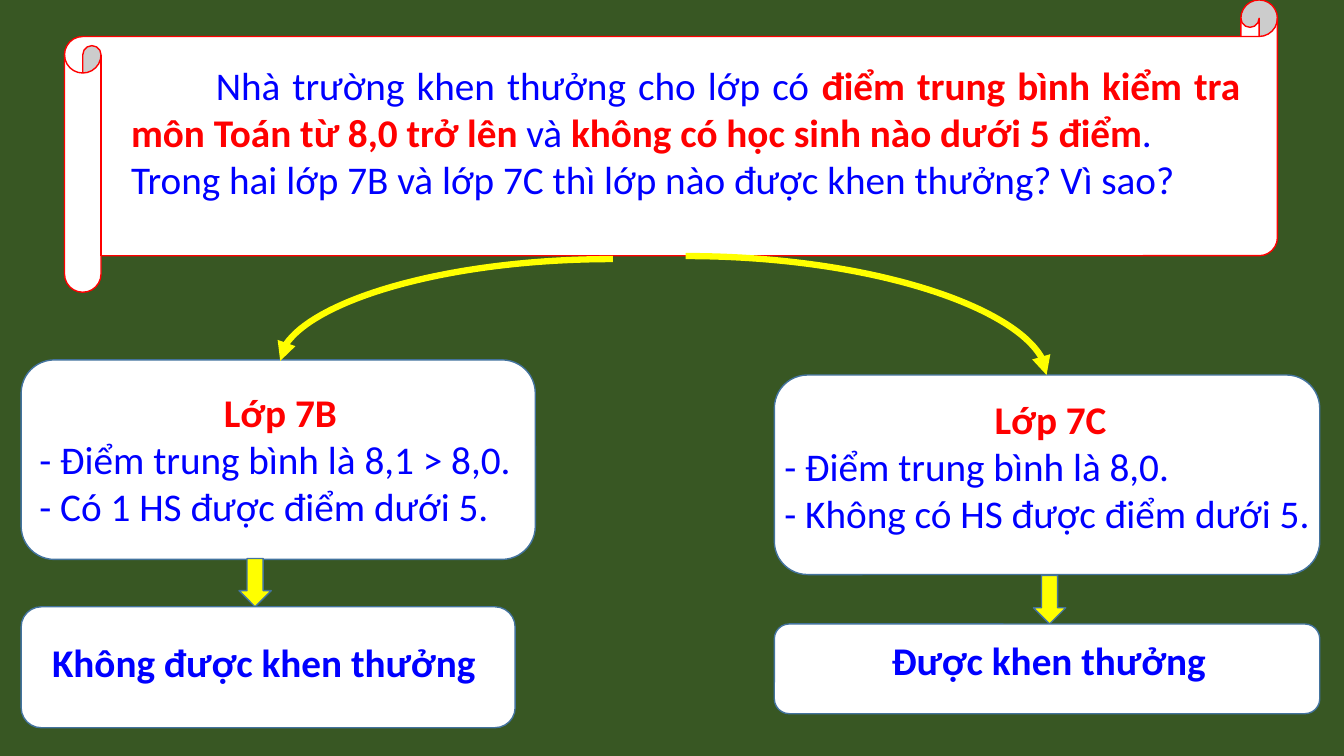
import pptx
import pptx.util
import pptx.dml.color
import pptx.enum.shapes
import pptx.enum.text
import pptx.oxml.ns
import lxml.etree

RGBColor = pptx.dml.color.RGBColor
GREEN = RGBColor(0x38, 0x57, 0x23)
WHITE = RGBColor(0xFF, 0xFF, 0xFF)
RED = RGBColor(0xFF, 0x00, 0x00)
BLUE = RGBColor(0x00, 0x00, 0xFF)
YELLOW = RGBColor(0xFF, 0xFF, 0x00)
STEEL = RGBColor(0x43, 0x73, 0x9E)

SHAPE = pptx.enum.shapes.MSO_SHAPE
ALIGN = pptx.enum.text.PP_ALIGN
qn = pptx.oxml.ns.qn

deck = pptx.Presentation()
deck.slide_width = pptx.util.Inches(13.33)
deck.slide_height = pptx.util.Inches(7.5)
COLUMN = deck.slide_width / 13.33
ROW = deck.slide_height / 7.5

slide = deck.slides.add_slide(deck.slide_layouts[3])
slide.background.fill.solid()
slide.background.fill.fore_color.rgb = GREEN
question, *class_lists = slide.placeholders


def draw(preset, left, top, width, height, fill, outline):
    panel = slide.shapes.add_shape(
        preset, round(left * COLUMN), round(top * ROW), round(width * COLUMN), round(height * ROW))
    panel.shadow.inherit = False
    panel.fill.solid()
    panel.fill.fore_color.rgb = fill
    panel.line.color.rgb = outline
    panel.line.width = pptx.util.Pt(1)


def write(holder, left, top, width, height, paragraphs):
    holder.left, holder.top = round(left * COLUMN), round(top * ROW)
    holder.width, holder.height = round(width * COLUMN), round(height * ROW)
    slide.shapes._spTree.append(holder._element)
    frame = holder.text_frame
    frame.word_wrap = True
    frame.auto_size = pptx.enum.text.MSO_AUTO_SIZE.NONE
    frame.vertical_anchor = pptx.enum.text.MSO_ANCHOR.TOP
    for number, (alignment, indent, runs) in enumerate(paragraphs):
        paragraph = frame.add_paragraph() if number else frame.paragraphs[0]
        paragraph.alignment = alignment
        paragraph.space_before = pptx.util.Pt(0)
        properties = paragraph._p.get_or_add_pPr()
        properties.set("marL", "0")
        properties.set("indent", str(round(indent * COLUMN)))
        lxml.etree.SubElement(properties, qn("a:buNone"))
        paragraph.font.name = "Calibri"
        paragraph.font.size = pptx.util.Pt(28)
        for words, color, bold in runs:
            run = paragraph.add_run()
            run.text = words
            run.font.name = "Calibri"
            run.font.size = pptx.util.Pt(28)
            run.font.bold = bold
            run.font.color.rgb = color


draw(SHAPE.HORIZONTAL_SCROLL, 0.64, 0, 12.03, 2.9, WHITE, RED)
write(question, 1.2, 0.56, 11.2, 1.51, [
    (ALIGN.JUSTIFY, 0.84, [
        ("Nhà trường khen thưởng cho lớp có ", BLUE, False),
        ("điểm trung bình kiểm tra môn Toán từ 8,0 trở lên ", RED, True),
        ("và ", BLUE, False),
        ("không có học sinh nào dưới 5 điểm", RED, True),
        (".", BLUE, False)]),
    (ALIGN.JUSTIFY, 0, [
        ("Trong hai lớp 7B và lớp 7C thì lớp nào được khen thưởng? Vì sao?", BLUE, False)])])

branches = [
    ("Lớp 7B", ["- Điểm trung bình là 8,1 > 8,0.", "- Có 1 HS được điểm dưới 5."],
     "Không được khen thưởng",
     (0.21, 3.57, 5.1, 1.98), (0.29, 3.8, 4.98, 1.51), (2.37, 5.54, 0.32, 0.48),
     (0.21, 6.02, 4.9, 1.2), (0.25, 6.28, 4.73, 0.57), (6.08, 2.57, 2.78, 3.58)),
    ("Lớp 7C", ["- Điểm trung bình là 8,0.", "- Không có HS được điểm dưới 5."],
     "Được khen thưởng",
     (7.68, 3.72, 5.41, 1.98), (7.68, 3.87, 5.48, 1.51), (10.25, 5.71, 0.32, 0.48),
     (7.68, 6.19, 5.41, 0.89), (8.42, 6.26, 3.96, 0.57), (6.8, 2.54, 10.38, 3.72)),
]

for class_list, branch in zip(class_lists, branches):
    (name, findings, verdict, class_card, class_area, down_arrow,
     verdict_card, verdict_area, (start_x, start_y, end_x, end_y)) = branch

    draw(SHAPE.ROUNDED_RECTANGLE, *class_card, WHITE, STEEL)
    write(class_list, *class_area,
          [(ALIGN.CENTER, 0, [(name, RED, True)])]
          + [(ALIGN.JUSTIFY, 0, [(finding, BLUE, False)]) for finding in findings])

    curve = slide.shapes.add_connector(
        pptx.enum.shapes.MSO_CONNECTOR.CURVE,
        round(start_x * COLUMN), round(start_y * ROW), round(end_x * COLUMN), round(end_y * ROW))
    curve.line.color.rgb = YELLOW
    curve.line.width = pptx.util.Pt(4.5)
    curve_properties = curve._element.spPr
    curve_properties.find(qn("a:prstGeom")).set("prst", "curvedConnector2")
    lxml.etree.SubElement(curve_properties.find(qn("a:ln")), qn("a:tailEnd"), type="triangle")
    lxml.etree.SubElement(curve_properties, qn("a:effectLst"))

    draw(SHAPE.DOWN_ARROW, *down_arrow, YELLOW, STEEL)
    draw(SHAPE.ROUNDED_RECTANGLE, *verdict_card, WHITE, STEEL)
    write(slide.shapes.add_textbox(0, 0, 0, 0), *verdict_area,
          [(ALIGN.CENTER, 0, [(verdict, BLUE, True)])])

deck.save("out.pptx")
